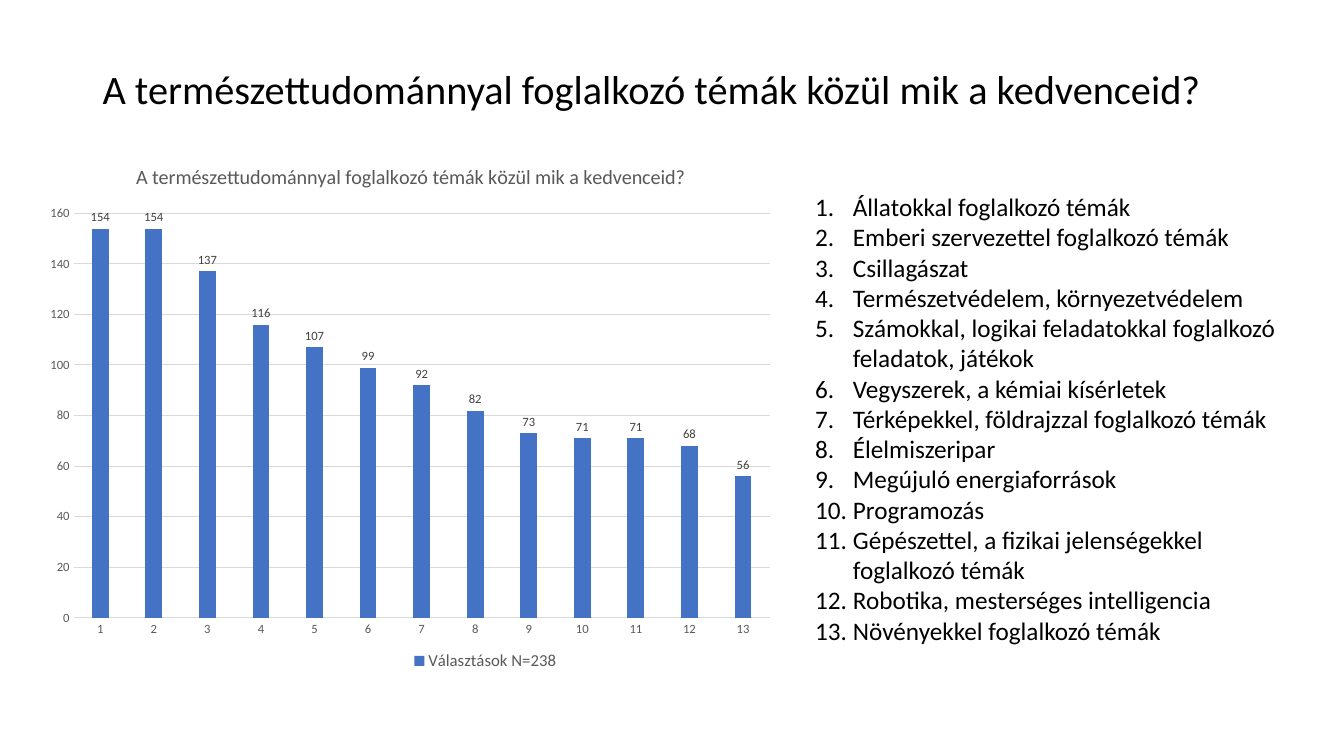
from dataclasses import dataclass

import pptx
import pptx.chart.data
import pptx.dml.color
import pptx.enum.chart
import pptx.enum.text
import pptx.oxml
import pptx.oxml.ns
import pptx.util
from pptx.util import Cm

QUESTION = "A természettudománnyal foglalkozó témák közül mik a kedvenceid?"
SERIES_NAME = "Választások N=238"
TOPICS = [
    ("Állatokkal foglalkozó témák", 154),
    ("Emberi szervezettel foglalkozó témák", 154),
    ("Csillagászat", 137),
    ("Természetvédelem, környezetvédelem", 116),
    ("Számokkal, logikai feladatokkal foglalkozó feladatok, játékok", 107),
    ("Vegyszerek, a kémiai kísérletek", 99),
    ("Térképekkel, földrajzzal foglalkozó témák", 92),
    ("Élelmiszeripar", 82),
    ("Megújuló energiaforrások", 73),
    ("Programozás", 71),
    ("Gépészettel, a fizikai jelenségekkel foglalkozó témák", 71),
    ("Robotika, mesterséges intelligencia", 68),
    ("Növényekkel foglalkozó témák", 56),
]

# Left, top, width, height in centimetres
TITLE_BOX = (2.33, 1.01, 29.21, 2.6)
CHART_BOX = (0.91, 3.61, 18.87, 13.59)
LIST_BOX = (20.29, 4.7, 13.0, 11.79)
LIST_INDENT = 0.95

# Left, top, width, height as shares of the chart
PLOT_AREA = (0.05, 0.13, 0.93, 0.75)
LEGEND_AREA = (0.49, 0.93, 0.22, 0.06)


@dataclass(frozen=True)
class Theme:
    font: str = "Calibri"
    text: str = "000000"
    chart_text: str = "595959"
    label_text: str = "404040"
    grid: str = "D9D9D9"
    bar: str = "4472C4"
    title_size: float = 28.8
    list_size: float = 18
    chart_title_size: float = 14.4
    legend_size: float = 12
    axis_size: float = 9


THEME = Theme()


def style_font(font, size, color):
    font.name = THEME.font
    font.size = pptx.util.Pt(size)
    font.bold = False
    font.color.rgb = pptx.dml.color.RGBColor.from_string(color)


def place(shape, box):
    shape.left, shape.top, shape.width, shape.height = map(Cm, box)


def style_line(line):
    line.color.rgb = pptx.dml.color.RGBColor.from_string(THEME.grid)
    line.width = pptx.util.Pt(0.75)


def manual_layout(area, inner=False):
    """Return a c:layout element that fixes a chart part in place."""
    target = '<c:layoutTarget val="inner"/>' if inner else ""
    modes = '<c:xMode val="edge"/><c:yMode val="edge"/>'
    sizes = "".join(f'<c:{name} val="{share}"/>' for name, share in zip("xywh", area))
    return pptx.oxml.parse_xml(
        f'<c:layout {pptx.oxml.ns.nsdecls("c")}><c:manualLayout>'
        f"{target}{modes}{sizes}</c:manualLayout></c:layout>"
    )


def drop_layout(element):
    for layout in element.findall(pptx.oxml.ns.qn("c:layout")):
        element.remove(layout)


def fill_title(title):
    place(title, TITLE_BOX)
    frame = title.text_frame
    frame.vertical_anchor = pptx.enum.text.MSO_ANCHOR.MIDDLE
    para = frame.paragraphs[0]
    para.alignment = pptx.enum.text.PP_ALIGN.LEFT
    para.line_spacing = 0.9
    span = para.add_run()
    span.text = QUESTION
    style_font(span.font, THEME.title_size, THEME.text)


def fill_topic_list(body):
    place(body, LIST_BOX)
    frame = body.text_frame
    frame.word_wrap = True
    frame.auto_size = pptx.enum.text.MSO_AUTO_SIZE.NONE
    frame.vertical_anchor = pptx.enum.text.MSO_ANCHOR.TOP
    for index, (topic, _) in enumerate(TOPICS):
        para = frame.add_paragraph() if index else frame.paragraphs[0]
        para.space_before = pptx.util.Pt(0)
        properties = para._p.get_or_add_pPr()
        properties.set("marL", str(Cm(LIST_INDENT)))
        properties.set("indent", str(-Cm(LIST_INDENT)))
        properties.append(pptx.oxml.parse_xml(
            f'<a:buFont {pptx.oxml.ns.nsdecls("a")} typeface="+mj-lt"/>'))
        properties.append(pptx.oxml.parse_xml(
            f'<a:buAutoNum {pptx.oxml.ns.nsdecls("a")} type="arabicPeriod"/>'))
        span = para.add_run()
        span.text = topic
        style_font(span.font, THEME.list_size, THEME.text)


def style_axes(chart):
    for axis in (chart.category_axis, chart.value_axis):
        axis.major_tick_mark = pptx.enum.chart.XL_TICK_MARK.NONE
        axis.minor_tick_mark = pptx.enum.chart.XL_TICK_MARK.NONE
        style_font(axis.tick_labels.font, THEME.axis_size, THEME.chart_text)
    style_line(chart.category_axis.format.line)
    values = chart.value_axis
    values.minimum_scale, values.maximum_scale, values.major_unit = 0, 160, 20
    values.format.line.fill.background()
    style_line(values.major_gridlines.format.line)


def style_bars(plot):
    plot.gap_width, plot.overlap = 219, -27
    plot.vary_by_categories = False
    fill = plot.series[0].format.fill
    fill.solid()
    fill.fore_color.rgb = pptx.dml.color.RGBColor.from_string(THEME.bar)
    plot.has_data_labels = True
    labels = plot.data_labels
    labels.show_value = True
    labels.position = pptx.enum.chart.XL_LABEL_POSITION.OUTSIDE_END
    style_font(labels.font, THEME.axis_size, THEME.label_text)


def add_votes_chart(slide):
    data = pptx.chart.data.CategoryChartData()
    data.categories = [str(number) for number in range(1, len(TOPICS) + 1)]
    data.add_series(SERIES_NAME, [votes for _, votes in TOPICS])
    chart = slide.shapes.add_chart(
        pptx.enum.chart.XL_CHART_TYPE.COLUMN_CLUSTERED, *map(Cm, CHART_BOX), data
    ).chart
    style_font(chart.font, 10, THEME.text)
    style_axes(chart)
    style_bars(chart.plots[0])

    chart.has_title = True
    span = chart.chart_title.text_frame.paragraphs[0].add_run()
    span.text = QUESTION
    style_font(span.font, THEME.chart_title_size, THEME.chart_text)

    chart.has_legend = True
    legend = chart.legend
    legend.position = pptx.enum.chart.XL_LEGEND_POSITION.BOTTOM
    legend.include_in_layout = False
    style_font(legend.font, THEME.legend_size, THEME.chart_text)

    drop_layout(legend._element)
    position = legend._element.find(pptx.oxml.ns.qn("c:legendPos"))
    position.addnext(manual_layout(LEGEND_AREA))
    plot_area = chart._chartSpace.chart.plotArea
    drop_layout(plot_area)
    plot_area.insert(0, manual_layout(PLOT_AREA, inner=True))


def main():
    deck = pptx.Presentation()
    deck.slide_width, deck.slide_height = Cm(33.87), Cm(19.05)
    page = deck.slides.add_slide(deck.slide_layouts[1])
    fill_title(page.shapes.title)
    add_votes_chart(page)
    fill_topic_list(page.placeholders[1])
    deck.save("out.pptx")


if __name__ == "__main__":
    main()
